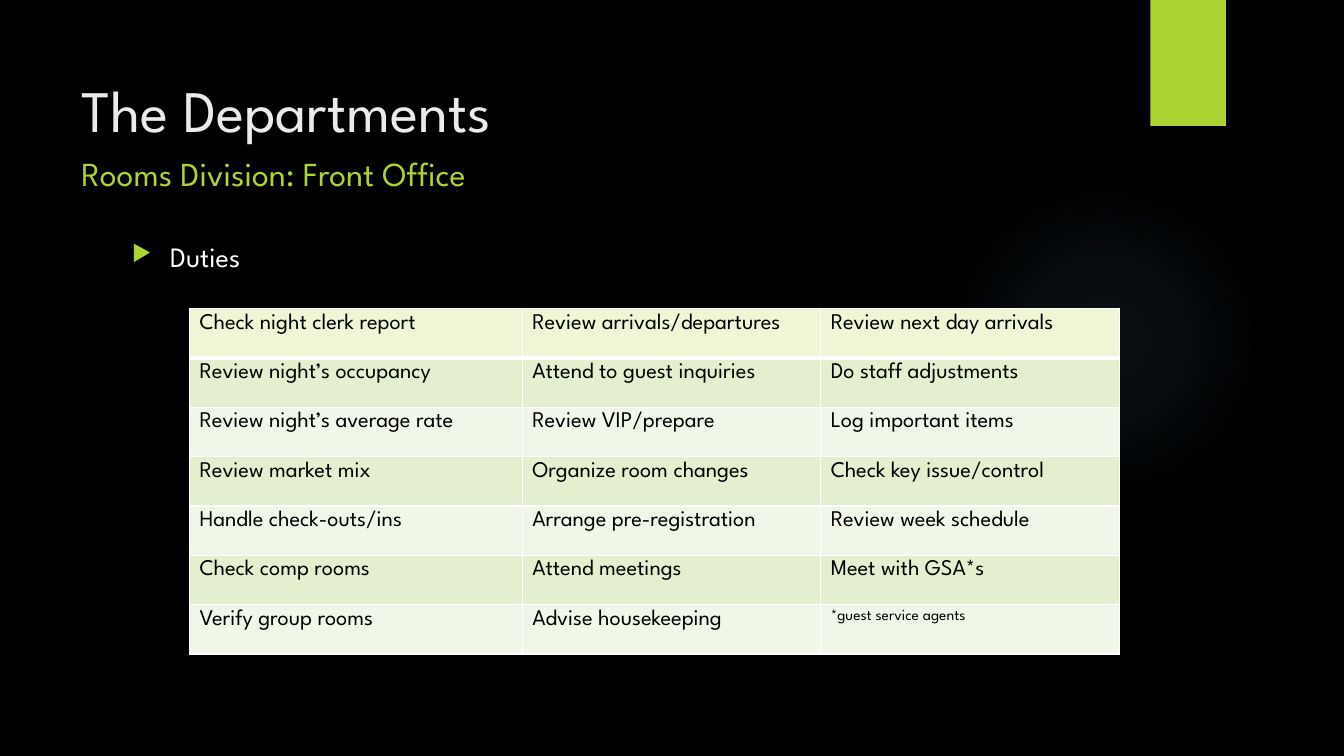
import pptx
import pptx.dml.color
import pptx.enum.shapes
import pptx.enum.text
import pptx.oxml
import pptx.oxml.ns
import pptx.util

Inches = pptx.util.Inches
Pt = pptx.util.Pt

TITLE = "The Departments"
SUBTITLE = "Rooms Division: Front Office"
BULLET = "Duties"
DUTIES = [
    ("Check night clerk report", "Review arrivals/departures", "Review next day arrivals"),
    ("Review night’s occupancy", "Attend to guest inquiries", "Do staff adjustments"),
    ("Review night’s average rate", "Review VIP/prepare", "Log important items"),
    ("Review market mix", "Organize room changes", "Check key issue/control"),
    ("Handle check-outs/ins", "Arrange pre-registration", "Review week schedule"),
    ("Check comp rooms", "Attend meetings", "Meet with GSA*s"),
    ("Verify group rooms", "Advise housekeeping", "*guest service agents"),
]
COLUMN_WIDTHS = (3.3, 2.96, 2.96)
ROW_HEIGHT = 0.49
GLOW_STOPS = ((0, 7), (36, 6), (69, 0))

THEME = {
    "font": "League Spartan",
    "background": "000000",
    "accent": "ACD433",
    "glow": "7AC4F0",
    "title": "EBEBEB",
    "body": "FFFFFF",
    "cell_text": "000000",
    "header_fill": "EEF6D6",
    "band_fills": ("F1F7E8", "E3EFCE"),
    "border": "FFFFFF",
    "title_size": 42,
    "subtitle_size": 24,
    "body_size": 20,
    "cell_size": 16,
    "note_size": 11,
}


def rgb(name):
    return pptx.dml.color.RGBColor.from_string(THEME[name])


def xml(tag, content):
    return pptx.oxml.parse_xml(f"<a:{tag} {pptx.oxml.ns.nsdecls('a')}{content}</a:{tag.split()[0]}>")


def style(para, size, color):
    for span in para.runs:
        span.font.name = THEME["font"]
        span.font.size = Pt(THEME[size])
        span.font.color.rgb = rgb(color)


def add_plain_shape(page, kind, left, top, width, height):
    shape = page.shapes.add_shape(kind, Inches(left), Inches(top), Inches(width), Inches(height))
    shape.shadow.inherit = False
    shape.line.fill.background()
    return shape


def add_glow(page):
    glow = add_plain_shape(page, pptx.enum.shapes.MSO_SHAPE.OVAL, 9.41, 1.83, 3.08, 3.08)
    stops = "".join(
        f'<a:gs pos="{position * 1000}"><a:srgbClr val="{THEME["glow"]}">'
        f'<a:alpha val="{alpha * 1000}"/></a:srgbClr></a:gs>'
        for position, alpha in GLOW_STOPS
    )
    center = '<a:fillToRect l="50000" t="50000" r="50000" b="50000"/>'
    gradient = xml("gradFill", f'><a:gsLst>{stops}</a:gsLst><a:path path="circle">{center}</a:path>')
    glow._element.spPr.find(pptx.oxml.ns.qn("a:prstGeom")).addnext(gradient)


def add_accent_bar(page):
    bar = add_plain_shape(page, pptx.enum.shapes.MSO_SHAPE.RECTANGLE, 11.41, 0, 0.75, 1.25)
    bar.fill.solid()
    bar.fill.fore_color.rgb = rgb("accent")


def add_text_frame(page, left, top, width, height, top_inset):
    box = page.shapes.add_textbox(Inches(left), Inches(top), Inches(width), Inches(height))
    frame = box.text_frame
    frame.word_wrap = True
    frame.vertical_anchor = pptx.enum.text.MSO_ANCHOR.TOP
    frame.margin_top = Inches(top_inset)
    return frame


def add_title(page):
    frame = add_text_frame(page, 0.71, 0.5, 10.29, 1.53, 0.23)
    frame.text = TITLE
    style(frame.paragraphs[0], "title_size", "title")
    subtitle = frame.add_paragraph()
    subtitle.text = SUBTITLE
    subtitle.space_before = Pt(6)
    style(subtitle, "subtitle_size", "accent")


def add_bullet(page):
    frame = add_text_frame(page, 1.21, 2.25, 9.78, 4.59, 0.13)
    frame.text = BULLET
    para = frame.paragraphs[0]
    properties = para._p.get_or_add_pPr()
    properties.set("marL", str(Inches(0.38)))
    properties.set("indent", str(-Inches(0.38)))
    properties.append(xml("buClr", f'><a:srgbClr val="{THEME["accent"]}"/>'))
    properties.append(xml('buSzPct val="80000"', ">"))
    properties.append(xml('buChar char="▶"', ">"))
    style(para, "body_size", "body")


def set_borders(cell, top, bottom):
    sides = (("lnL", 1), ("lnR", 1), ("lnT", top), ("lnB", bottom))
    for index, (side, width) in enumerate(sides):
        fill = f'><a:solidFill><a:srgbClr val="{THEME["border"]}"/></a:solidFill>'
        line = xml(f'{side} w="{Pt(width)}"', fill)
        cell._tc.get_or_add_tcPr().insert(index, line)


def row_color(row):
    return THEME["header_fill"] if row == 0 else THEME["band_fills"][row % 2]


def add_duties_table(page):
    rows, columns = len(DUTIES), len(COLUMN_WIDTHS)
    table = page.shapes.add_table(
        rows, columns, Inches(1.88), Inches(3.06),
        Inches(sum(COLUMN_WIDTHS)), Inches(ROW_HEIGHT * rows),
    ).table
    for column, width in zip(table.columns, COLUMN_WIDTHS):
        column.width = Inches(width)
    for row, duties in enumerate(DUTIES):
        table.rows[row].height = Inches(ROW_HEIGHT)
        for column, duty in enumerate(duties):
            cell = table.cell(row, column)
            cell.text_frame.text = duty
            size = "note_size" if duty.startswith("*") else "cell_size"
            style(cell.text_frame.paragraphs[0], size, "cell_text")
            cell.fill.solid()
            cell.fill.fore_color.rgb = pptx.dml.color.RGBColor.from_string(row_color(row))
            set_borders(cell, 3 if row == 1 else 1, 3 if row == 0 else 1)


def main():
    deck = pptx.Presentation()
    deck.slide_width, deck.slide_height = Inches(13.33), Inches(7.5)
    page = deck.slides.add_slide(deck.slide_layouts[6])
    page.background.fill.solid()
    page.background.fill.fore_color.rgb = rgb("background")
    add_glow(page)
    add_accent_bar(page)
    add_title(page)
    add_bullet(page)
    add_duties_table(page)
    deck.save("out.pptx")


if __name__ == "__main__":
    main()
